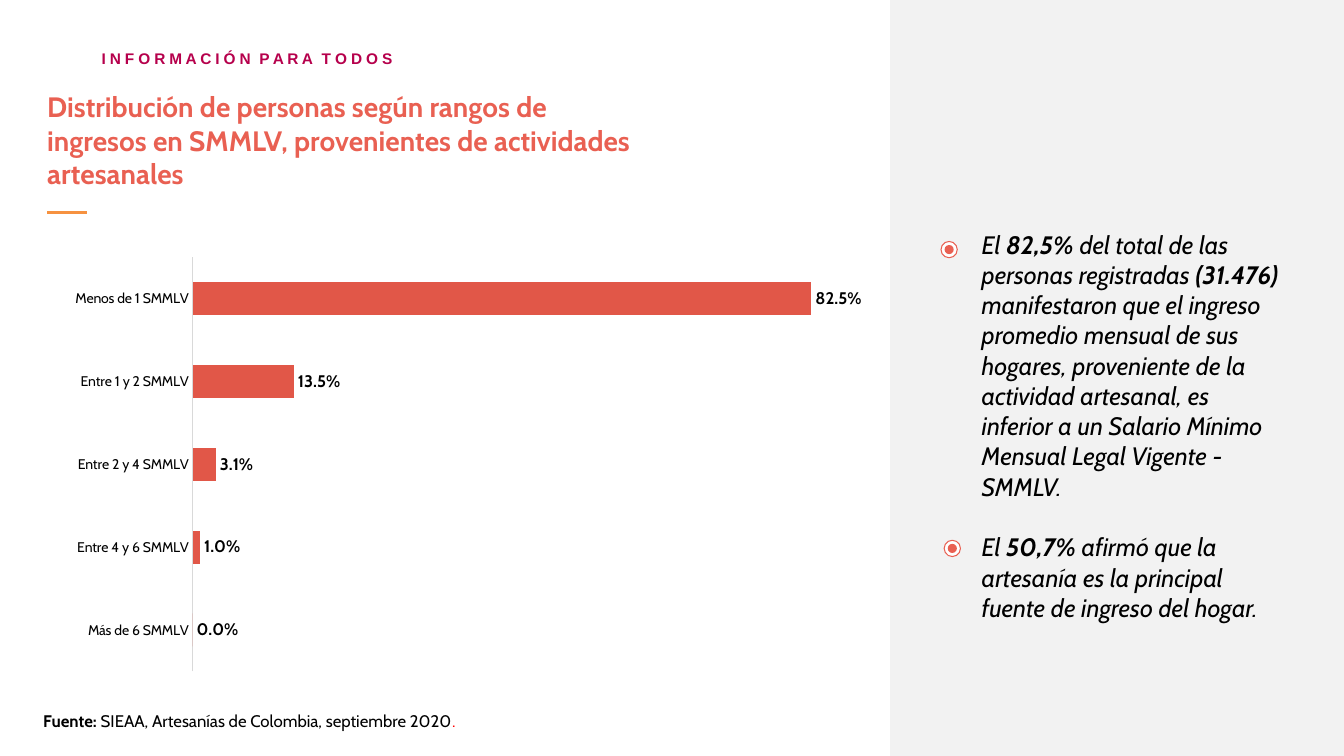
from dataclasses import dataclass

from lxml.etree import SubElement
from pptx import Presentation
from pptx.chart.data import CategoryChartData
from pptx.dml.color import RGBColor
from pptx.enum.chart import XL_CHART_TYPE, XL_LABEL_POSITION, XL_TICK_MARK
from pptx.enum.shapes import MSO_CONNECTOR, MSO_SHAPE
from pptx.enum.text import MSO_ANCHOR, MSO_AUTO_SIZE, PP_ALIGN
from pptx.oxml import parse_xml
from pptx.oxml.ns import nsdecls, qn
from pptx.util import Cm, Pt

BLACK = RGBColor(0x00, 0x00, 0x00)
WHITE = RGBColor(0xFF, 0xFF, 0xFF)
RED = RGBColor(0xFF, 0x00, 0x00)
CORAL = RGBColor(0xE9, 0x60, 0x52)
BAR_RED = RGBColor(0xE1, 0x57, 0x48)
MAGENTA = RGBColor(0xB6, 0x00, 0x4C)
ORANGE = RGBColor(0xF6, 0x92, 0x40)
PANEL_GREY = RGBColor(0xF2, 0xF2, 0xF2)
AXIS_GREY = RGBColor(0xD9, 0xD9, 0xD9)
FONT = "Cabin"


@dataclass(frozen=True)
class Area:
    left: float
    top: float
    width: float
    height: float

    def lengths(self) -> tuple:
        return Cm(self.left), Cm(self.top), Cm(self.width), Cm(self.height)


@dataclass(frozen=True)
class Span:
    text: str
    bold: bool = False
    color: RGBColor = BLACK


@dataclass(frozen=True)
class Marker:
    center_x: float
    center_y: float


MARKERS = [Marker(23.92, 6.29), Marker(24.0, 13.82)]
FINDINGS = [
    [
        Span("El "),
        Span("82,5% ", bold=True),
        Span("del total de las personas registradas "),
        Span("(31.476) ", bold=True),
        Span("manifestaron que el ingreso promedio mensual de sus hogares, "
             "proveniente de la actividad artesanal, es inferior a un Salario "
             "Mínimo Mensual Legal Vigente - SMMLV."),
    ],
    [
        Span("El "),
        Span("50,7% ", bold=True),
        Span("afirmó que la artesanía es la principal fuente de ingreso del hogar."),
    ],
]
SOURCE = [
    Span("Fuente: ", bold=True),
    Span("SIEAA, Artesanías de Colombia, septiembre 2020"),
    Span(".", color=RED),
]
INCOME_SHARES = {
    "Más de 6 SMMLV": 0,
    "Entre 4 y 6 SMMLV": 0.01,
    "Entre 2 y 4 SMMLV": 0.031,
    "Entre 1 y 2 SMMLV": 0.135,
    "Menos de 1 SMMLV": 0.825,
}


def add_span(para, span: Span, size: float, italic: bool = False, font: str = FONT):
    run = para.add_run()
    run.text = span.text
    run.font.name = font
    run.font.size = Pt(size)
    run.font.bold = span.bold
    run.font.italic = italic
    run.font.color.rgb = span.color
    return run


def set_frame(frame, side: float = 0, end: float = 0) -> None:
    frame.word_wrap = True
    frame.auto_size = MSO_AUTO_SIZE.NONE
    frame.vertical_anchor = MSO_ANCHOR.TOP
    frame.margin_left = frame.margin_right = Cm(side)
    frame.margin_top = frame.margin_bottom = Cm(end)


def add_text(page, area: Area, paragraphs: list[list[Span]], size: float,
             italic: bool = False, gap: float = 0) -> None:
    frame = page.shapes.add_textbox(*area.lengths()).text_frame
    set_frame(frame, 0.33, 0.18)
    for index, spans in enumerate(paragraphs):
        para = frame.add_paragraph() if index else frame.paragraphs[0]
        if index:
            para.space_before = Pt(gap)
        for span in spans:
            add_span(para, span, size, italic)


def add_plain_shape(shapes, kind: MSO_SHAPE, area: Area, fill: RGBColor,
                    line: RGBColor | None = None) -> None:
    shape = shapes.add_shape(kind, *area.lengths())
    shape.shadow.inherit = False
    shape.fill.solid()
    shape.fill.fore_color.rgb = fill
    if line is None:
        shape.line.fill.background()
    else:
        shape.line.color.rgb = line
        shape.line.width = Pt(0.75)


def add_marker(page, marker: Marker) -> None:
    group = page.shapes.add_group_shape()
    for diameter, fill, line in ((0.41, WHITE, CORAL), (0.23, CORAL, None)):
        area = Area(marker.center_x - diameter / 2, marker.center_y - diameter / 2,
                    diameter, diameter)
        add_plain_shape(group.shapes, MSO_SHAPE.OVAL, area, fill, line)


def add_header(page) -> None:
    """Add the letter-spaced line above the title, with wider gaps between words."""
    frame = page.shapes.add_textbox(*Area(2.56, 1.11, 10.4, 0.64).lengths()).text_frame
    set_frame(frame)
    para = frame.paragraphs[0]
    para.line_spacing = 1.3
    for index, word in enumerate(("INFORMACIÓN", "PARA", "TODOS")):
        if index:
            space = add_span(para, Span(" ", True, MAGENTA), 11, font="Arial")
            space.font._element.set("spc", "300")
        letters = Span(" ".join(word), True, MAGENTA)
        run = add_span(para, letters, 11, font="Arial")
        run.font._element.set("spc", "-10")


def set_title(page) -> None:
    title = page.shapes.title
    title.left, title.top, title.width, title.height = Area(1.19, 2.26, 15, 2.57).lengths()
    set_frame(title.text_frame)
    para = title.text_frame.paragraphs[0]
    para.alignment = PP_ALIGN.LEFT
    add_span(para, Span("Distribución de personas según rangos de ingresos en SMMLV, "
                        "provenientes de actividades artesanales", True, CORAL), 20)


def add_accent(page) -> None:
    accent = page.shapes.add_connector(MSO_CONNECTOR.STRAIGHT, Cm(1.19), Cm(5.36),
                                       Cm(2.2), Cm(5.36))
    accent.line.color.rgb = ORANGE
    accent.line.width = Pt(2.25)
    SubElement(accent._element.spPr, qn("a:effectLst"))


def add_income_chart(page) -> None:
    data = CategoryChartData(number_format="0.0%")
    data.categories = list(INCOME_SHARES)
    data.add_series("Series 1", list(INCOME_SHARES.values()))
    chart = page.shapes.add_chart(XL_CHART_TYPE.BAR_CLUSTERED,
                                  *Area(1.12, 5.89, 20.75, 11.86).lengths(), data).chart
    chart.has_legend = False
    chart.has_title = False
    chart.font.name = FONT
    chart.font.size = Pt(10)
    chart.font.color.rgb = BLACK

    categories = chart.category_axis
    categories.major_tick_mark = XL_TICK_MARK.NONE
    categories.format.line.color.rgb = AXIS_GREY
    categories.format.line.width = Pt(0.75)
    values = chart.value_axis
    values.minimum_scale, values.maximum_scale = 0, 0.9
    values.has_major_gridlines = False
    values.visible = False

    plot = chart.plots[0]
    plot.vary_by_categories = False
    plot.gap_width = 150
    plot.overlap = -25
    bars = plot.series[0]
    bars.format.fill.solid()
    bars.format.fill.fore_color.rgb = BAR_RED
    labels = bars.data_labels
    labels.show_value = True
    labels.position = XL_LABEL_POSITION.OUTSIDE_END
    labels.number_format = "0.0%"
    labels.number_format_is_linked = False
    labels.font.name = FONT
    labels.font.size = Pt(12)
    labels.font.bold = True
    labels.font.color.rgb = BLACK

    plot_area = chart._chartSpace.chart.plotArea
    for old_layout in plot_area.findall(qn("c:layout")):
        plot_area.remove(old_layout)
    plot_area.insert(0, parse_xml(
        f'<c:layout {nsdecls("c")}><c:manualLayout><c:layoutTarget val="inner"/>'
        '<c:xMode val="edge"/><c:yMode val="edge"/><c:x val="0.18"/><c:y val="0.05"/>'
        '<c:w val="0.82"/><c:h val="0.88"/></c:manualLayout></c:layout>'))


def main() -> None:
    deck = Presentation()
    deck.slide_width, deck.slide_height = Cm(33.87), Cm(19.05)
    page = deck.slides.add_slide(deck.slide_layouts[5])
    add_header(page)
    set_title(page)
    add_accent(page)
    add_plain_shape(page.shapes, MSO_SHAPE.RECTANGLE, Area(22.43, 0, 11.44, 19.05), PANEL_GREY)
    for marker in MARKERS:
        add_marker(page, marker)
    add_text(page, Area(24.41, 5.59, 8.28, 10.34), FINDINGS, 18, italic=True, gap=21.9)
    add_income_chart(page)
    add_text(page, Area(0.76, 17.73, 16.71, 0.86), [SOURCE], 12)
    deck.save("out.pptx")


if __name__ == "__main__":
    main()
